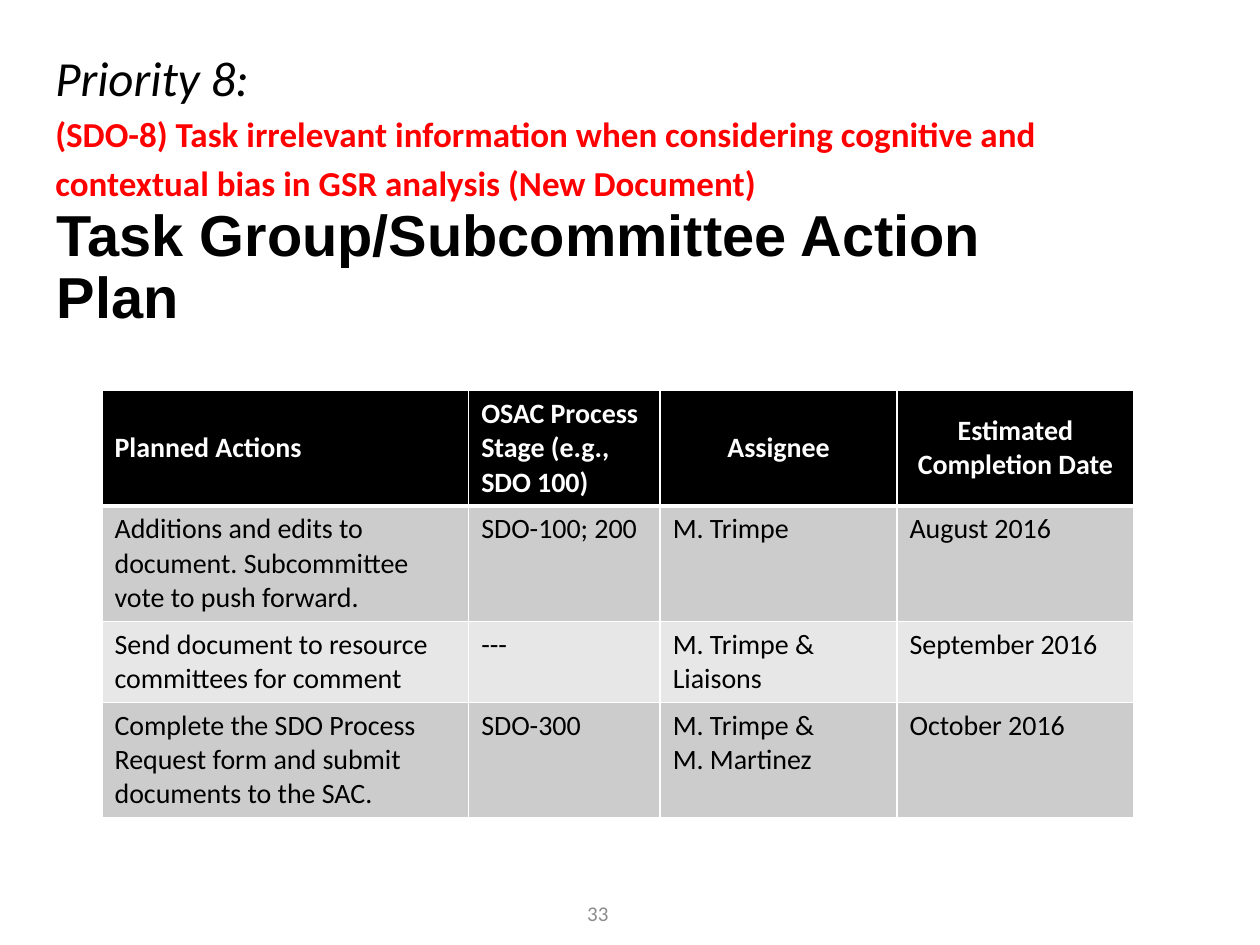
from dataclasses import dataclass

from lxml.etree import SubElement
from pptx import Presentation
from pptx.dml.color import RGBColor
from pptx.enum.text import MSO_ANCHOR as Anchor, MSO_AUTO_SIZE as AutoSize, PP_ALIGN as Align
from pptx.oxml.ns import qn
from pptx.util import Inches, Pt


@dataclass(frozen=True)
class Theme:
    """Colours, fonts and type sizes of the slide."""
    black: str = "000000"
    white: str = "FFFFFF"
    red: str = "FF0000"
    grey: str = "8C8C8C"
    bands: tuple = ("CCCCCC", "E7E7E7")
    heading_font: str = "Arial"
    body_font: str = "Calibri"
    title: int = 33
    priority: int = 28
    task: int = 20
    cell: int = 16
    number: int = 12


THEME = Theme()
COLUMN_WIDTHS = (2.91, 1.52, 1.88, 1.88)
ROW_HEIGHTS = (0.67, 0.4, 0.4, 0.4)
HEADERS = ("Planned Actions", "OSAC Process Stage (e.g., SDO 100)",
           "Assignee", "Estimated Completion Date")
ACTIONS = (
    ("Additions and edits to document. Subcommittee vote to push forward.",
     "SDO-100; 200", "M. Trimpe", "August 2016"),
    ("Send document to resource committees for comment",
     "---", "M. Trimpe & Liaisons", "September 2016"),
    ("Complete the SDO Process Request form and submit documents to the SAC.",
     "SDO-300", "M. Trimpe &\nM. Martinez", "October 2016"),
)


def write(para, text, size, color=THEME.black, font=THEME.body_font,
          bold=False, italic=False, align=Align.LEFT, spacing=None):
    """Add formatted text to a paragraph."""
    para.alignment = align
    if spacing:
        para.line_spacing = spacing
    span = para.add_run()
    span.text = text
    span.font.name, span.font.size = font, Pt(size)
    span.font.bold, span.font.italic = bold, italic
    span.font.color.rgb = RGBColor.from_string(color)


def add_title(page, text):
    """Fill and place the title placeholder."""
    title = page.shapes.title
    title.left, title.top, title.width, title.height = map(Inches, (0.35, 1.41, 8.62, 1.45))
    frame = title.text_frame
    frame.auto_size, frame.vertical_anchor = AutoSize.NONE, Anchor.MIDDLE
    write(frame.paragraphs[0], text, THEME.title, font=THEME.heading_font,
          bold=True, spacing=0.9)


def add_text_box(page, left, top, width, height, anchor=Anchor.TOP, grow=False):
    """Add an empty wrapping text box and return its text frame."""
    frame = page.shapes.add_textbox(*map(Inches, (left, top, width, height))).text_frame
    frame.word_wrap, frame.vertical_anchor = True, anchor
    frame.auto_size = AutoSize.SHAPE_TO_FIT_TEXT if grow else AutoSize.NONE
    return frame


def set_borders(cell, bottom):
    """Draw white borders around a cell, with a given bottom width."""
    properties = cell._tc.get_or_add_tcPr()
    for index, (side, width) in enumerate((("L", 1), ("R", 1), ("T", 1), ("B", bottom))):
        line = properties.makeelement(qn(f"a:ln{side}"), w=str(Pt(width)))
        properties.insert(index, line)
        fill = SubElement(line, qn("a:solidFill"))
        SubElement(fill, qn("a:srgbClr"), val=THEME.white)


def fill_cell(cell, text, fill, bottom=1, anchor=Anchor.TOP, **style):
    """Write, colour and border one table cell."""
    cell.fill.solid()
    cell.fill.fore_color.rgb = RGBColor.from_string(fill)
    cell.vertical_anchor = anchor
    set_borders(cell, bottom)
    for index, line in enumerate(text.split("\n")):
        frame = cell.text_frame
        para = frame.add_paragraph() if index else frame.paragraphs[0]
        write(para, line, THEME.cell, **style)


def add_action_table(page):
    """Add the table of planned actions."""
    holder = page.shapes.add_table(len(ROW_HEIGHTS), len(COLUMN_WIDTHS),
                                   *map(Inches, (0.81, 3.1, 8.18, 3.33)))
    table = holder.table
    for column, width in zip(table.columns, COLUMN_WIDTHS):
        column.width = Inches(width)
    for row, height in zip(table.rows, ROW_HEIGHTS):
        row.height = Inches(height)
    holder.height = Inches(3.33)
    for column, text in enumerate(HEADERS):
        fill_cell(table.cell(0, column), text, THEME.black, bottom=3,
                  anchor=Anchor.MIDDLE, color=THEME.white, bold=True,
                  align=Align.LEFT if column < 2 else Align.CENTER)
    for row, action in enumerate(ACTIONS):
        for column, text in enumerate(action):
            fill_cell(table.cell(row + 1, column), text, THEME.bands[row % 2])


def main():
    """Build and save the action plan slide."""
    deck = Presentation()
    deck.slide_width, deck.slide_height = Inches(10), Inches(7.5)
    page = deck.slides.add_slide(deck.slide_layouts.get_by_name("Title Only"))
    add_title(page, "Task Group/Subcommittee Action Plan")
    add_action_table(page)
    priority = add_text_box(page, 0.34, 0.33, 8.22, 1.35, grow=True)
    write(priority.paragraphs[0], "Priority 8:", THEME.priority, italic=True)
    write(priority.add_paragraph(),
          "(SDO-8) Task irrelevant information when considering cognitive and "
          "contextual bias in GSR analysis (New Document)",
          THEME.task, color=THEME.red, bold=True, spacing=1.15)
    number = add_text_box(page, 3.62, 7.05, 2.25, 0.4, anchor=Anchor.MIDDLE)
    write(number.paragraphs[0], "33", THEME.number, color=THEME.grey, align=Align.CENTER)
    deck.save("out.pptx")


if __name__ == "__main__":
    main()
